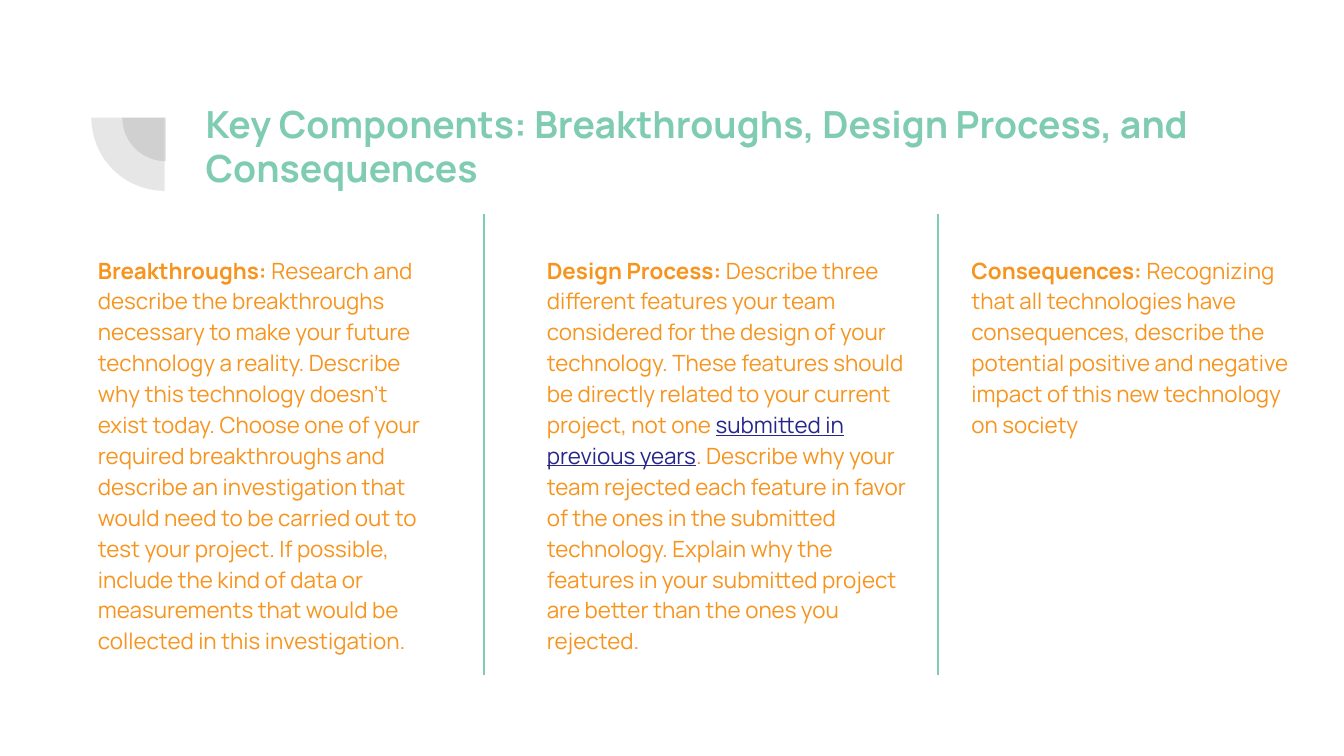
from lxml import etree
from pptx import Presentation
from pptx import util as u
from pptx.dml.color import RGBColor
from pptx.enum import shapes, text
from pptx.oxml.ns import qn

COLORS = {"title": "80CCB2", "body": "F7941D", "link": "27278B", "pie": "424242"}
FONT = "Manrope"


class SlideBuilder:
    def __init__(self, slide):
        self.slide = slide

    def color(self, name):
        return RGBColor.from_string(COLORS[name])

    def format_run(self, r, size, color, bold=False, underline=False):
        r.font.name = FONT
        r.font.size = u.Pt(size)
        r.font.bold = bold
        r.font.underline = underline
        r.font.color.rgb = self.color(color)

    def format_frame(self, tf):
        tf.word_wrap = True
        tf.auto_size = text.MSO_AUTO_SIZE.NONE
        tf.vertical_anchor = text.MSO_ANCHOR.TOP
        tf.margin_left = tf.margin_right = u.Inches(0.1)
        tf.margin_top = tf.margin_bottom = u.Inches(0.1)

    def title(self, words, x, y, w, h):
        sp = self.slide.shapes.title
        sp.left, sp.top, sp.width, sp.height = map(u.Inches, (x, y, w, h))
        tf = sp.text_frame
        tf.text = words
        self.format_frame(tf)
        p = tf.paragraphs[0]
        p.alignment = text.PP_ALIGN.LEFT
        self.format_run(p.runs[0], 20, "title", bold=True)

    def column(self, heading, parts, x, y, w, h):
        """Bold heading, then text parts; the second part looks like a link."""
        sp = self.slide.shapes.add_textbox(*map(u.Inches, (x, y, w, h)))
        self.format_frame(sp.text_frame)
        p = sp.text_frame.paragraphs[0]
        p.line_spacing = 1.15
        for i, words in enumerate([heading, *parts]):
            r = p.add_run()
            r.text = words
            marked = i == 2
            self.format_run(r, 12, "link" if marked else "body", i == 0, marked)

    def quarter(self, x, y, size):
        """Lower-left quarter of a disc."""
        sp = self.slide.shapes.add_shape(
            shapes.MSO_SHAPE.PIE, *map(u.Inches, (x, y, size, size)))
        sp.shadow.inherit = False
        sp.adjustments[0], sp.adjustments[1] = 54, 108
        sp.fill.solid()
        sp.fill.fore_color.rgb = self.color("pie")
        fill = sp._element.spPr.find(qn("a:solidFill"))
        etree.SubElement(fill[0], qn("a:alpha"), val="13000")
        sp.line.fill.background()

    def divider(self, x, top, bottom):
        line = self.slide.shapes.add_connector(
            shapes.MSO_CONNECTOR.STRAIGHT, *map(u.Inches, (x, top, x, bottom)))
        line.line.color.rgb = self.color("title")
        line.line.width = u.Pt(0.75)
        etree.SubElement(line._element.spPr, qn("a:effectLst"))


def main():
    prs = Presentation()
    prs.slide_width = u.Inches(10)
    prs.slide_height = prs.slide_width * 9 // 16
    s = SlideBuilder(prs.slides.add_slide(prs.slide_layouts[5]))

    # Corner ornament
    s.quarter(0.91, 0.55, 0.65)
    s.quarter(0.68, 0.33, 1.09)

    # Title
    s.title("Key Components: Breakthroughs, Design Process, and Consequences",
            1.43, 0.65, 7.69, 1.09)

    # Text columns
    columns = [
        (0.63, 2.68, 1.58, "Breakthroughs: ", [
            "Research and describe the breakthroughs necessary to make your future "
            "technology a reality. Describe why this technology doesn’t exist today. "
            "Choose one of your required breakthroughs and describe an investigation "
            "that would need to be carried out to test your project. If possible, "
            "include the kind of data or measurements that would be collected in this "
            "investigation."]),
        (3.97, 2.92, 2.94, "Design Process: ", [
            "Describe three different features your team considered for the design of "
            "your technology. These features should be directly related to your "
            "current project, not one ",
            "submitted in previous years",
            ". Describe why your team rejected each feature in favor of the ones in "
            "the submitted technology. Explain why the features in your submitted "
            "project are better than the ones you rejected."]),
        (7.13, 2.56, 1.5, "Consequences:", [
            " Recognizing that all technologies have consequences, describe the "
            "potential positive and negative impact of this new technology on society"]),
    ]
    for x, w, h, heading, parts in columns:
        s.column(heading, parts, x, 1.78, w, h)

    # Dividers
    for x in (3.6, 6.98):
        s.divider(x, 1.59, 5.02)

    prs.save("out.pptx")


if __name__ == "__main__":
    main()
